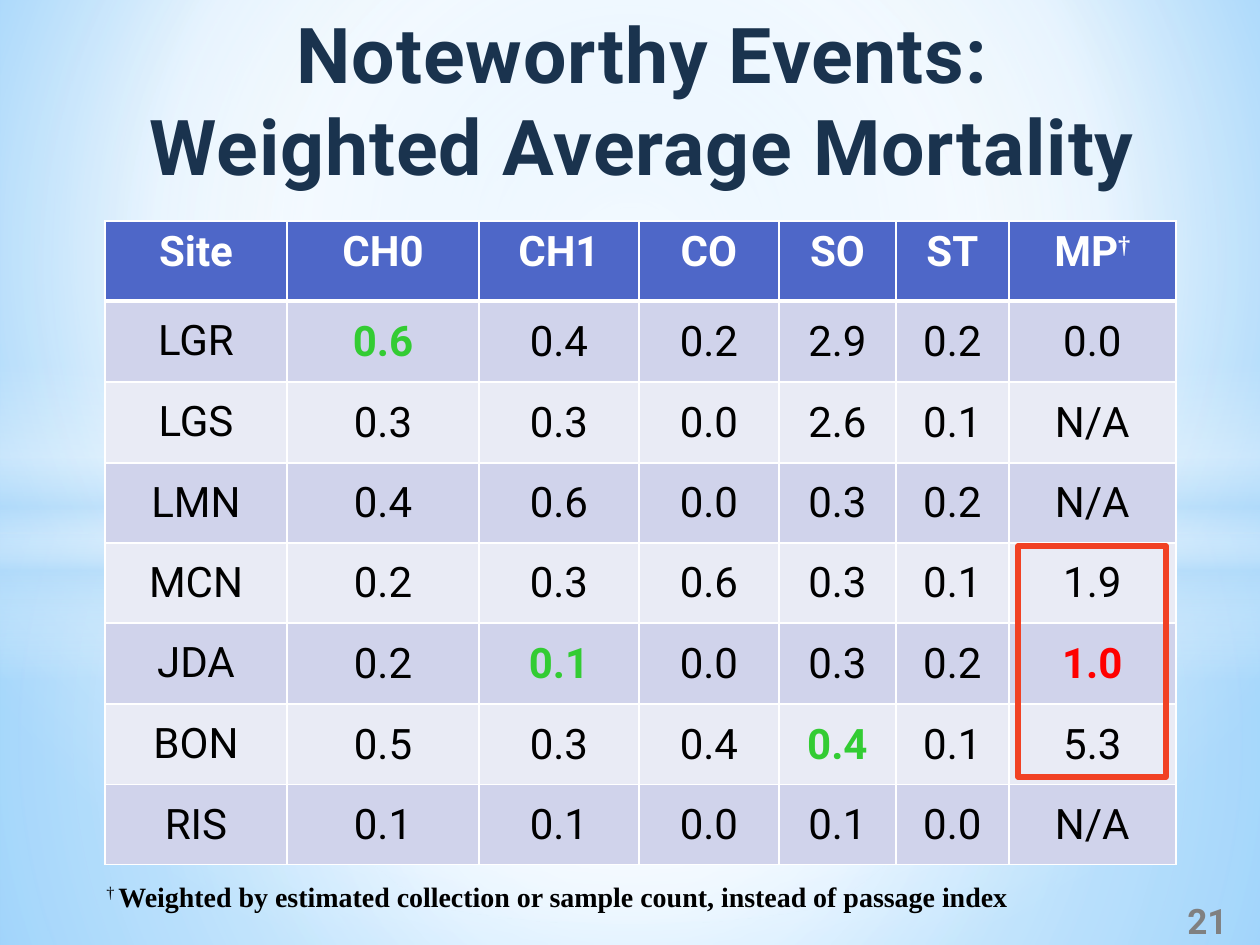
from dataclasses import dataclass
from itertools import pairwise

from lxml.etree import SubElement
from pptx import Presentation
from pptx.dml.color import RGBColor
from pptx.enum.shapes import MSO_SHAPE
from pptx.enum.text import MSO_ANCHOR, MSO_AUTO_SIZE, PP_ALIGN
from pptx.oxml import parse_xml
from pptx.oxml.ns import nsdecls, qn
from pptx.util import Emu, Pt

PX_PER_INCH = 126


@dataclass(frozen=True)
class Theme:
    sans: str = "Roboto"
    serif: str = "Times New Roman"
    title: str = "1A334E"
    header: str = "4E67C8"
    bands: tuple[str, str] = ("D0D3EB", "E9EBF5")
    white: str = "FFFFFF"
    sky: str = "B4DCFA"
    black: str = "000000"
    low: str = "33CC33"
    high: str = "FF0000"
    frame: str = "F14124"
    page_number: str = "808080"
    title_size: int = 44
    table_size: int = 24
    page_size: int = 20
    note_size: int = 16


@dataclass(frozen=True)
class Box:
    left: int
    top: int
    width: int
    height: int

    def emu(self) -> tuple[Emu, ...]:
        return tuple(px(n) for n in (self.left, self.top, self.width, self.height))


@dataclass(frozen=True)
class Stop:
    position: int
    color: str
    opacity: int = 100


@dataclass(frozen=True)
class Glow:
    kind: MSO_SHAPE
    box: Box
    stops: tuple[Stop, ...]
    linear: bool = False


THEME = Theme()
WHITE, SKY = THEME.white, THEME.sky
RECT, OVAL = MSO_SHAPE.RECTANGLE, MSO_SHAPE.OVAL

BACKGROUND = (Stop(0, "9ED5FF"), Stop(60, WHITE), Stop(100, "5BB9FF"))
GLOWS = (
    Glow(RECT, Box(0, 533, 1260, 412),
         (Stop(0, WHITE, 91), Stop(37, WHITE, 76), Stop(100, SKY, 79))),
    Glow(RECT, Box(0, 0, 1260, 533),
         (Stop(0, WHITE, 89), Stop(48, WHITE, 62), Stop(100, SKY, 79))),
    Glow(RECT, Box(0, 365, 1260, 315),
         (Stop(0, WHITE, 0), Stop(29, WHITE, 30), Stop(45, SKY, 40),
          Stop(55, WHITE, 26), Stop(65, SKY, 60), Stop(100, WHITE, 0)), linear=True),
    Glow(OVAL, Box(0, 221, 1260, 703), (Stop(0, WHITE), Stop(54, WHITE, 0))),
)

TABLE_BOX = Box(105, 221, 1071, 644)
COLUMN_WIDTHS = (182, 192, 160, 140, 117, 113, 167)
ROWS = (
    ("Site", "CH0", "CH1", "CO", "SO", "ST", "MP"),
    ("LGR", "0.6", "0.4", "0.2", "2.9", "0.2", "0.0"),
    ("LGS", "0.3", "0.3", "0.0", "2.6", "0.1", "N/A"),
    ("LMN", "0.4", "0.6", "0.0", "0.3", "0.2", "N/A"),
    ("MCN", "0.2", "0.3", "0.6", "0.3", "0.1", "1.9"),
    ("JDA", "0.2", "0.1", "0.0", "0.3", "0.2", "1.0"),
    ("BON", "0.5", "0.3", "0.4", "0.4", "0.1", "5.3"),
    ("RIS", "0.1", "0.1", "0.0", "0.1", "0.0", "N/A"),
)
HIGHLIGHTS = {(1, 1): THEME.low, (5, 2): THEME.low, (6, 4): THEME.low, (5, 6): THEME.high}


def px(length: int) -> Emu:
    return Emu(round(length * 914400 / PX_PER_INCH))


def style(span, size: int, color: str, bold: bool = False, font: str = THEME.sans) -> None:
    span.font.name, span.font.size, span.font.bold = font, Pt(size), bold
    span.font.color.rgb = RGBColor.from_string(color)


def raise_span(span) -> None:
    span.font._element.set("baseline", "30000")


def indent(para, left: int, first: int) -> None:
    properties = para._p.get_or_add_pPr()
    properties.set("marL", str(px(left)))
    properties.set("indent", str(px(first)))


def set_gradient(fill, parent, stops: tuple[Stop, ...], direction: str) -> None:
    """Replace the solid fill of parent with a gradient."""
    fill.solid()
    marks = "".join(
        f'<a:gs pos="{stop.position * 1000}"><a:srgbClr val="{stop.color}">'
        f'<a:alpha val="{stop.opacity * 1000}"/></a:srgbClr></a:gs>' for stop in stops)
    gradient = parse_xml(f'<a:gradFill {nsdecls("a")} rotWithShape="1">'
                         f"<a:gsLst>{marks}</a:gsLst>{direction}</a:gradFill>")
    parent.replace(parent.find(qn("a:solidFill")), gradient)


def radial(left: int, top: int, right: int, bottom: int) -> str:
    return (f'<a:path path="circle"><a:fillToRect l="{left}000" t="{top}000" '
            f'r="{right}000" b="{bottom}000"/></a:path>')


def draw_glow(slide, glow: Glow) -> None:
    shape = slide.shapes.add_shape(glow.kind, *glow.box.emu())
    shape.shadow.inherit = False
    shape.line.fill.background()
    direction = '<a:lin ang="5400000" scaled="0"/>' if glow.linear else radial(50, 50, 50, 50)
    set_gradient(shape.fill, shape._element.spPr, glow.stops, direction)


def set_borders(cell, top: int, bottom: int) -> None:
    properties = cell._tc.get_or_add_tcPr()
    for index, (side, width) in enumerate((("L", 1), ("R", 1), ("T", top), ("B", bottom))):
        line = SubElement(properties, qn(f"a:ln{side}"), w=str(Pt(width)))
        SubElement(SubElement(line, qn("a:solidFill")), qn("a:srgbClr"), val=WHITE)
        properties.insert(index, line)


def draw_cell(cell, row: int, column: int, text: str) -> None:
    header = row == 0
    cell.fill.solid()
    cell.fill.fore_color.rgb = RGBColor.from_string(
        THEME.header if header else THEME.bands[(row - 1) % 2])
    set_borders(cell, top=3 if row == 1 else 1, bottom=3 if header else 1)
    cell.vertical_anchor = MSO_ANCHOR.TOP if header else MSO_ANCHOR.MIDDLE
    if not header and column:
        cell.margin_left = cell.margin_right = cell.margin_top = px(1)
        cell.margin_bottom = 0
    para = cell.text_frame.paragraphs[0]
    para.text, para.alignment = text, PP_ALIGN.CENTER
    highlight = HIGHLIGHTS.get((row, column))
    color = WHITE if header else highlight or THEME.black
    style(para.runs[0], THEME.table_size, color, header or highlight is not None)


def draw_table(slide) -> None:
    table = slide.shapes.add_table(len(ROWS), len(COLUMN_WIDTHS), *TABLE_BOX.emu()).table
    table.first_row = table.horz_banding = False
    for column, width in zip(table.columns, COLUMN_WIDTHS):
        column.width = px(width)
    edges = [round(TABLE_BOX.height * n / len(ROWS)) for n in range(len(ROWS) + 1)]
    for row, (top, bottom) in zip(table.rows, pairwise(edges)):
        row.height = px(bottom - top)
    for row, values in enumerate(ROWS):
        for column, text in enumerate(values):
            draw_cell(table.cell(row, column), row, column, text)
    dagger = table.cell(0, len(COLUMN_WIDTHS) - 1).text_frame.paragraphs[0].add_run()
    dagger.text = "†"
    style(dagger, THEME.table_size, WHITE, True, THEME.serif)
    raise_span(dagger)


def draw_title(slide) -> None:
    title = slide.shapes.title
    slide.shapes._spTree.append(title._element)  # in front of the glows
    title.left, title.top, title.width, title.height = Box(0, 0, 1260, 94).emu()
    frame = title.text_frame
    frame.text = "Noteworthy Events:\nWeighted Average Mortality"
    frame.vertical_anchor, frame.auto_size = MSO_ANCHOR.TOP, MSO_AUTO_SIZE.NONE
    for para in frame.paragraphs:
        para.alignment = PP_ALIGN.CENTER
        indent(para, 25, 0)
        style(para.runs[0], THEME.title_size, THEME.title, True)
        para.runs[0].font._element.set("spc", "50")


def add_text(slide, box: Box):
    frame = slide.shapes.add_textbox(*box.emu()).text_frame
    frame.word_wrap = True
    return frame


def main() -> None:
    deck = Presentation()
    deck.slide_width, deck.slide_height = px(1260), px(945)
    slide = deck.slides.add_slide(deck.slide_layouts[5])

    # Backdrop
    fill = slide.background.fill
    fill.solid()
    set_gradient(fill, slide.element.xpath(".//p:bgPr")[0], BACKGROUND, radial(20, 10, 20, 60))
    for glow in GLOWS:
        draw_glow(slide, glow)

    draw_title(slide)
    draw_table(slide)

    # Footnote
    para = add_text(slide, Box(94, 873, 1081, 47)).paragraphs[0]
    indent(para, 32, -32)
    dagger, note = para.add_run(), para.add_run()
    dagger.text = "† "
    note.text = "Weighted by estimated collection or sample count, instead of passage index"
    style(dagger, THEME.note_size, THEME.black, font=THEME.serif)
    style(note, THEME.note_size, THEME.black, True, THEME.serif)
    raise_span(dagger)

    # Page number
    frame = add_text(slide, Box(1155, 896, 105, 50))
    frame.text, frame.vertical_anchor = "21", MSO_ANCHOR.MIDDLE
    frame.paragraphs[0].alignment = PP_ALIGN.CENTER
    style(frame.paragraphs[0].runs[0], THEME.page_size, THEME.page_number, True)

    # Frame around the notable MP values
    marker = slide.shapes.add_shape(RECT, *Box(1018, 546, 148, 231).emu())
    marker.shadow.inherit = False
    marker.fill.background()
    marker.line.color.rgb, marker.line.width = RGBColor.from_string(THEME.frame), Pt(3)

    deck.save("out.pptx")


if __name__ == "__main__":
    main()
